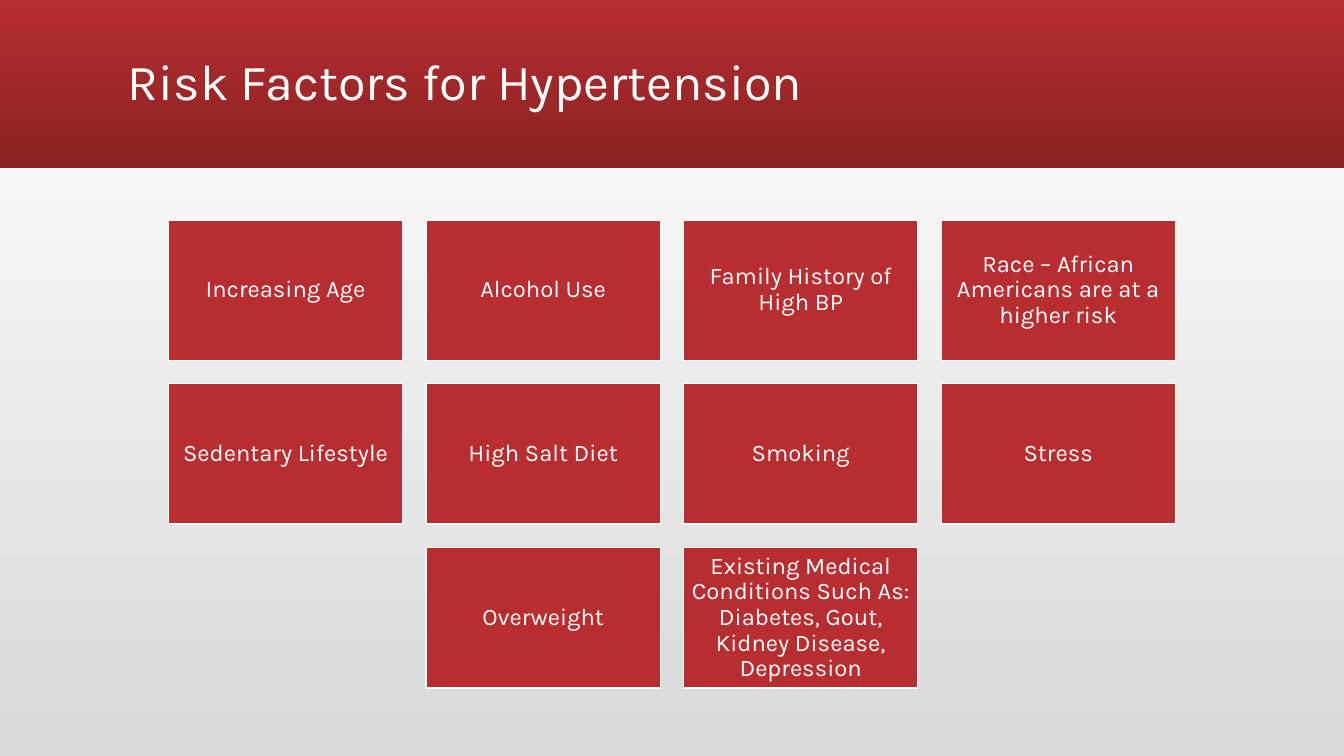
from pptx import Presentation
from pptx.dml.color import RGBColor
from pptx.enum.shapes import MSO_SHAPE as Shape
from pptx.enum.text import MSO_ANCHOR as Anchor, PP_ALIGN as Align
from pptx.util import Cm, Pt

WHITE = RGBColor(0xFF, 0xFF, 0xFF)
SILVER = RGBColor(0xD9, 0xD9, 0xD9)
RED = RGBColor(0xB8, 0x2D, 0x2F)
DARK_RED = RGBColor(0x8A, 0x22, 0x23)

FONT = "Karla"
PAGE_WIDTH, PAGE_HEIGHT = 33.87, 19.05
CARD_WIDTH, CARD_HEIGHT = 5.9, 3.54
GAP = 0.59
CARDS_TOP = 5.54

RISK_ROWS = [
    ["Increasing Age", "Alcohol Use", "Family History of High BP",
     "Race – African Americans are at a higher risk"],
    ["Sedentary Lifestyle", "High Salt Diet", "Smoking", "Stress"],
    ["Overweight",
     "Existing Medical Conditions Such As: Diabetes, Gout, "
     "Kidney Disease, Depression"],
]


def fill_downward(fill, top_color, bottom_color):
    fill.gradient()
    fill.gradient_angle = 270
    for stop, color in zip(fill.gradient_stops, (top_color, bottom_color)):
        stop.color.rgb = color


def write_text(frame, text, *, size, align, inset_x, inset_y):
    frame.word_wrap = True
    frame.vertical_anchor = Anchor.MIDDLE
    frame.margin_left = frame.margin_right = Cm(inset_x)
    frame.margin_top = frame.margin_bottom = Cm(inset_y)
    para = frame.paragraphs[0]
    para.alignment = align
    para.line_spacing = 0.9
    span = para.add_run()
    span.text = text
    span.font.name = FONT
    span.font.size = Pt(size)
    span.font.color.rgb = WHITE


def add_rectangle(page, left, top, width, height):
    box = page.shapes.add_shape(
        Shape.RECTANGLE, Cm(left), Cm(top), Cm(width), Cm(height))
    box.shadow.inherit = False
    return box


def add_header(page, title):
    band = add_rectangle(page, 0, 0, PAGE_WIDTH, 4.23)
    fill_downward(band.fill, RED, DARK_RED)
    band.line.fill.background()
    box = page.shapes.add_textbox(Cm(2.97), Cm(0.28), Cm(27.94), Cm(3.68))
    write_text(box.text_frame, title, size=36, align=Align.LEFT,
               inset_x=0.25, inset_y=0.13)


def add_card(page, left, top, text):
    card = add_rectangle(page, left, top, CARD_WIDTH, CARD_HEIGHT)
    card.fill.solid()
    card.fill.fore_color.rgb = RED
    card.line.color.rgb = WHITE
    card.line.width = Pt(1)
    write_text(card.text_frame, text, size=17, align=Align.CENTER,
               inset_x=0.17, inset_y=0.17)


def add_card_rows(page, rows):
    for row, labels in enumerate(rows):
        row_width = len(labels) * (CARD_WIDTH + GAP) - GAP
        row_left = (PAGE_WIDTH - row_width) / 2
        top = CARDS_TOP + row * (CARD_HEIGHT + GAP)
        for column, label in enumerate(labels):
            add_card(page, row_left + column * (CARD_WIDTH + GAP), top, label)


def main():
    deck = Presentation()
    deck.slide_width = Cm(PAGE_WIDTH)
    deck.slide_height = Cm(PAGE_HEIGHT)
    page = deck.slides.add_slide(deck.slide_layouts[6])
    fill_downward(page.background.fill, WHITE, SILVER)
    add_header(page, "Risk Factors for Hypertension")
    add_card_rows(page, RISK_ROWS)
    deck.save("out.pptx")


if __name__ == "__main__":
    main()
